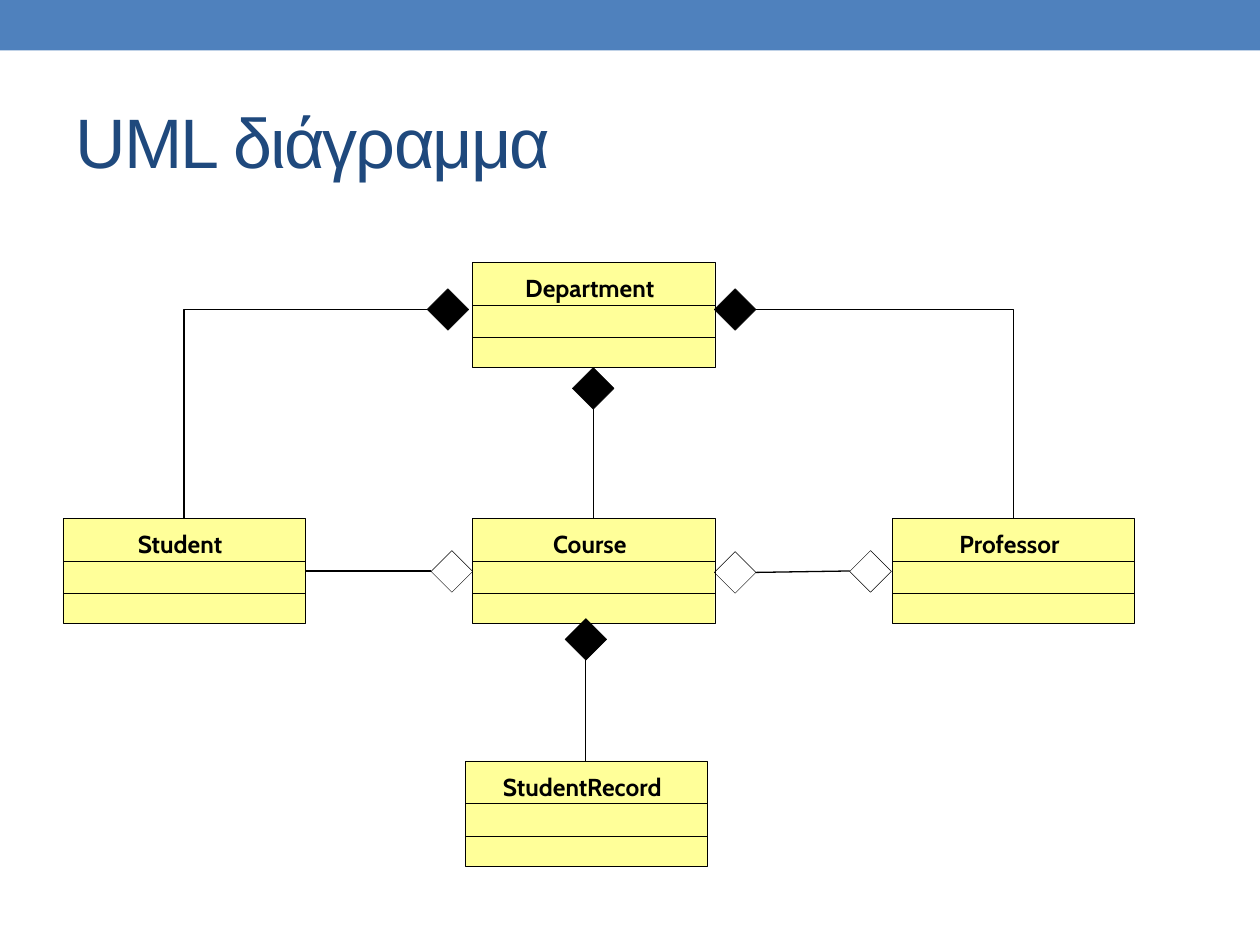
"""Build the UML class diagram slide of a university department."""
import pptx
import pptx.dml.color
import pptx.enum.shapes
import pptx.enum.text
import pptx.oxml.ns
import pptx.util
from lxml import etree

Cm, Pt = pptx.util.Cm, pptx.util.Pt
SHAPE = pptx.enum.shapes.MSO_SHAPE
CONNECTOR = pptx.enum.shapes.MSO_CONNECTOR


def paint(item, fill=None, line=None, width=0.25):
    """Set the fill and line of a shape or connector from hex colours."""
    if hasattr(item, "fill"):
        item.shadow.inherit = False
        if fill:
            item.fill.solid()
            item.fill.fore_color.rgb = pptx.dml.color.RGBColor.from_string(fill)
        else:
            item.fill.background()
    else:
        etree.SubElement(item._element.spPr, pptx.oxml.ns.qn("a:effectLst"))
    if line:
        item.line.color.rgb = pptx.dml.color.RGBColor.from_string(line)
        item.line.width = Pt(width)
    else:
        item.line.fill.background()


def write(frame, wording, colour, alignment, font_format):
    """Put one formatted line of text in a text frame."""
    paragraph = frame.paragraphs[0]
    paragraph.alignment = alignment
    run = paragraph.add_run()
    run.text = wording
    run.font.color.rgb = pptx.dml.color.RGBColor.from_string(colour)
    for name, value in font_format.items():
        setattr(run.font, name, value)
    return run


deck = pptx.Presentation()
deck.slide_width, deck.slide_height = Cm(25.4), Cm(19.05)
slide = deck.slides.add_slide(deck.slide_layouts[5])

top_band = slide.shapes.add_shape(SHAPE.RECTANGLE, 0, 0, deck.slide_width, Cm(1.02))
paint(top_band, "4F81BD")

heading = slide.shapes.title
heading_place = {"left": Cm(1.27), "top": Cm(1.47), "width": Cm(22.86), "height": Cm(2.74)}
for name, value in heading_place.items():
    setattr(heading, name, value)
heading.text_frame.vertical_anchor = pptx.enum.text.MSO_ANCHOR.MIDDLE
heading_run = write(heading.text_frame, "UML διάγραμμα", "1F497D",
                    pptx.enum.text.PP_ALIGN.LEFT, {"name": "Arial", "size": Pt(40)})
heading_run.font._element.set("spc", "-100")

class_width, class_height = 4.88, 2.12
classes = [
    ("Department", 9.53, 5.29),
    ("Course", 9.53, 10.45),
    ("Student", 1.27, 10.45),
    ("Professor", 17.99, 10.45),
    ("StudentRecord", 9.38, 15.34),
]
label_format = {"name": "Cabin", "size": Pt(14), "bold": True}
frame_format = {"word_wrap": True, "auto_size": pptx.enum.text.MSO_AUTO_SIZE.SHAPE_TO_FIT_TEXT}
for class_name, left, top in classes:
    members = slide.shapes.add_group_shape().shapes
    body = members.add_shape(SHAPE.RECTANGLE, Cm(left), Cm(top), Cm(class_width), Cm(class_height))
    paint(body, "FFFF99", "000000")
    label = members.add_textbox(Cm(left + 0.16), Cm(top + 0.09), Cm(4.4), Cm(0.86))
    for name, value in frame_format.items():
        setattr(label.text_frame, name, value)
    write(label.text_frame, class_name, "000000", pptx.enum.text.PP_ALIGN.CENTER, label_format)
    for offset in (0.86, 1.51):
        divider = members.add_connector(CONNECTOR.STRAIGHT, Cm(left), Cm(top + offset),
                                        Cm(left + class_width), Cm(top + offset))
        paint(divider, line="000000")

associations = [
    ("bentConnector2", 8.61, 6.24, 3.71, 10.45),
    ("bentConnector2", 15.24, 6.24, 20.43, 10.45),
    ("line", 11.97, 8.25, 11.97, 10.45),
    ("line", 15.24, 11.54, 17.13, 11.51),
    ("line", 6.15, 11.51, 8.69, 11.51),
    ("line", 11.81, 13.31, 11.81, 15.34),
]
for route, *ends in associations:
    association = slide.shapes.add_connector(CONNECTOR.STRAIGHT, *map(Cm, ends))
    association._element.spPr.find(pptx.oxml.ns.qn("a:prstGeom")).set("prst", route)
    paint(association, line="000000", width=0.75)

diamond_size = Cm(0.84)
diamonds = {
    "000000": [(8.61, 5.82), (11.54, 7.41), (14.4, 5.82), (11.39, 12.47)],
    None: [(14.4, 11.12), (17.13, 11.1), (8.69, 11.1)],
}
for fill, places in diamonds.items():
    for left, top in places:
        diamond = slide.shapes.add_shape(SHAPE.DIAMOND, Cm(left), Cm(top), diamond_size, diamond_size)
        paint(diamond, fill, "000000")

deck.save("out.pptx")
